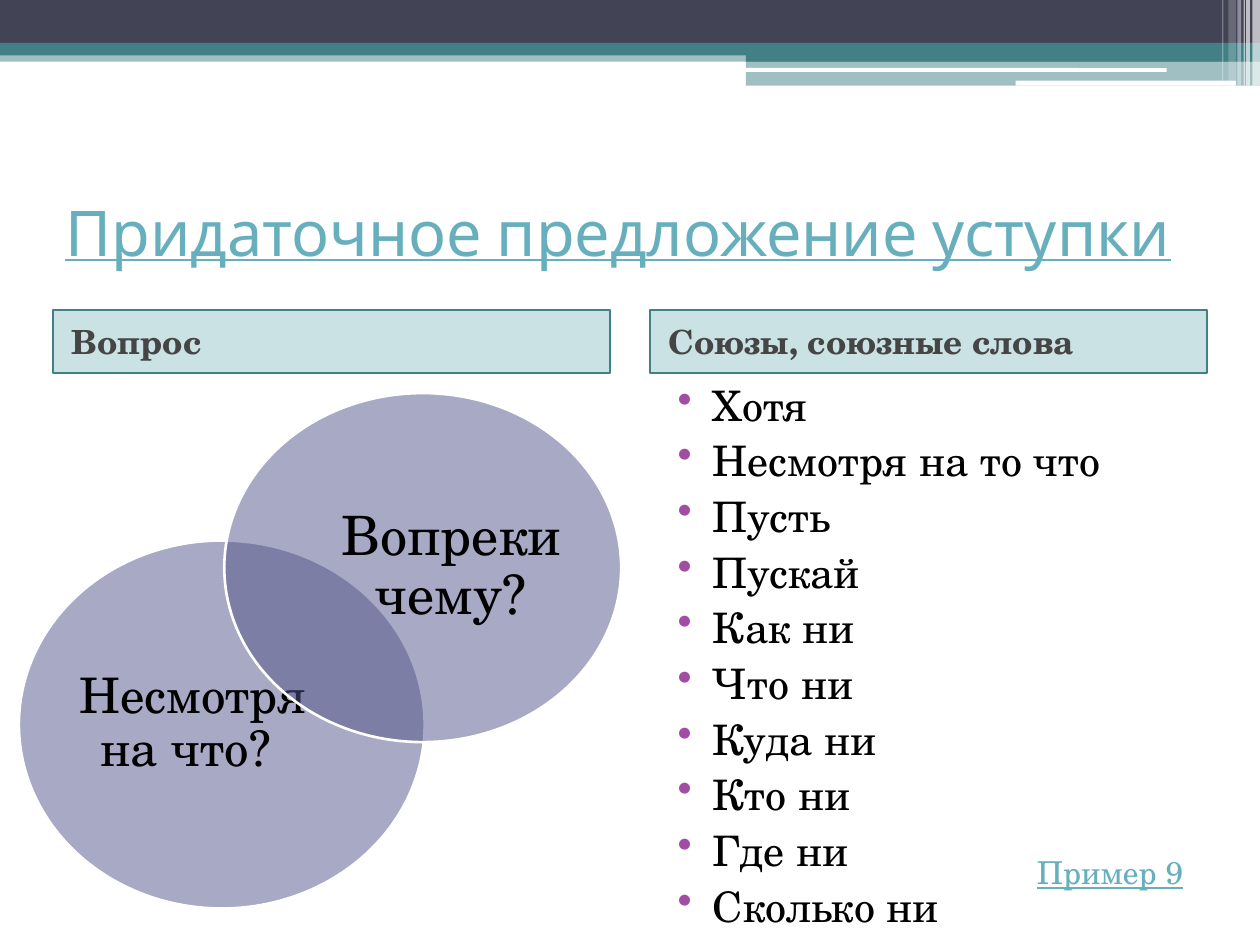
import pptx
import pptx.dml.color
import pptx.enum.shapes
import pptx.enum.text
import pptx.oxml
import pptx.oxml.ns
import pptx.util

Inches = pptx.util.Inches
Pt = pptx.util.Pt
RGBColor = pptx.dml.color.RGBColor
SHAPE = pptx.enum.shapes.MSO_SHAPE
ANCHOR = pptx.enum.text.MSO_ANCHOR
ALIGN = pptx.enum.text.PP_ALIGN

WHITE = RGBColor(0xFF, 0xFF, 0xFF)
BLACK = RGBColor(0, 0, 0)
SLATE = RGBColor(0x42, 0x44, 0x56)
TEAL = RGBColor(0x43, 0x80, 0x86)
HEADING_FILL = RGBColor(0x32, 0x8E, 0x97)
HEADING_TEXT = RGBColor(0x45, 0x45, 0x45)
LINK = RGBColor(0x67, 0xAF, 0xBD)
INDIGO = RGBColor(0x53, 0x54, 0x8A)
BULLET = RGBColor(0xA0, 0x4D, 0xA3)
SERIF = "TeX Gyre Schola"
SANS = "Karla"

CONJUNCTIONS = ["Хотя", "Несмотря на то что", "Пусть", "Пускай", "Как ни",
                "Что ни", "Куда ни", "Кто ни", "Где ни", "Сколько ни"]


def apply(target, formats):
    """Set every attribute named in formats on target."""
    for name, value in formats.items():
        setattr(target, name, value)


def add_xml(parent, tag, **attributes):
    """Append a drawing element with its attributes and return it."""
    element = pptx.oxml.parse_xml(f"<a:{tag} {pptx.oxml.ns.nsdecls('a')}/>")
    for name, value in attributes.items():
        element.set(name, str(value))
    parent.append(element)
    return element


def add_figure(slide, kind, box, color, opacity=100, line=None, line_width=1):
    """Draw a preset shape in box with a fill of the given opacity."""
    figure = slide.shapes.add_shape(kind, *map(Inches, box))
    figure.shadow.inherit = False
    figure.fill.solid()
    figure.fill.fore_color.rgb = color
    if opacity < 100:
        tint = figure.fill._xPr.find(".//" + pptx.oxml.ns.qn("a:srgbClr"))
        add_xml(tint, "alpha", val=opacity * 1000)
    if line is None:
        figure.line.fill.background()
    else:
        figure.line.color.rgb = line
        figure.line.width = Pt(line_width)
    return figure


def write(frame, lines, font, color, frame_format=None, paragraph_format=None):
    """Fill a text frame with one formatted paragraph for each line."""
    apply(frame, {"word_wrap": True, **(frame_format or {})})
    for index, line in enumerate(lines):
        paragraph = frame.paragraphs[0] if index == 0 else frame.add_paragraph()
        apply(paragraph, {"alignment": ALIGN.LEFT, **(paragraph_format or {})})
        run = paragraph.add_run()
        run.text = line
        apply(run.font, {"name": SERIF, **font})
        run.font.color.rgb = color


def add_text(slide, box, lines, font, color, frame_format=None, paragraph_format=None):
    """Add a text box and return its frame."""
    frame = slide.shapes.add_textbox(*map(Inches, box)).text_frame
    write(frame, lines, font, color, frame_format, paragraph_format)
    return frame


def add_banner(slide, left, top, width):
    """Draw the layered bands and the light stripes at the right edge."""
    half = width / 2 + 0.92
    bands = [
        (SHAPE.RECTANGLE, 0, 0.4, width, 0.09, TEAL, 50),
        (SHAPE.RECTANGLE, 0, 0, width, 0.34, SLATE, 100),
        (SHAPE.RECTANGLE, 0, 0.34, width, 0.1, TEAL, 100),
        (SHAPE.RECTANGLE, half, 0.39, width - half, 0.1, TEAL, 100),
        (SHAPE.RECTANGLE, half, 0.48, width - half, 0.2, TEAL, 50),
        (SHAPE.ROUNDED_RECTANGLE, half - 0.01, 0.54, 3.35, 0.03, WHITE, 100),
        (SHAPE.ROUNDED_RECTANGLE, width - 1.94, 0.64, 1.75, 0.04, WHITE, 100),
    ]
    stripes = [(0.06, 0.06, 0.68, 65), (0.11, 0.03, 0.68, 65),
               (0.13, 0.01, 0.68, 60), (0.18, 0.03, 0.68, 40),
               (0.25, 0.06, 0.64, 20), (0.3, 0.01, 0.64, 30)]
    bands += [(SHAPE.RECTANGLE, width - inset, 0, thickness, height, WHITE, opacity)
              for inset, thickness, height, opacity in stripes]
    for kind, x, y, band_width, height, color, opacity in bands:
        add_figure(slide, kind, (left + x, top + y, band_width, height), color, opacity)


def add_title(slide, box):
    """Write the underlined slide title."""
    add_text(slide, box, ["Придаточное предложение уступки"],
             {"name": SANS, "size": Pt(36), "underline": True}, LINK,
             {"vertical_anchor": ANCHOR.MIDDLE})


def add_heading(slide, box, heading):
    """Draw a tinted column heading."""
    plate = add_figure(slide, SHAPE.RECTANGLE, box, HEADING_FILL, 25, TEAL)
    write(plate.text_frame, [heading], {"size": Pt(19), "bold": True}, HEADING_TEXT,
          {"vertical_anchor": ANCHOR.MIDDLE}, {"space_before": Pt(3)})
    properties = plate.text_frame.paragraphs[0]._p.get_or_add_pPr()
    properties.set("marL", str(Inches(0.05)))


def add_questions(slide, left, top):
    """Draw the two overlapping circles with their questions."""
    questions = [
        ("Несмотря на что? ", 28, (0, 1.17, 3.22, 2.92), (0.45, 1.51, 1.86, 2.23)),
        ("Вопреки чему?", 31, (1.63, 0, 3.15, 2.77), (2.52, 0.33, 1.82, 2.11)),
    ]
    margins = dict.fromkeys(
        ["margin_left", "margin_top", "margin_right", "margin_bottom"], 0)
    for question, size, circle, label in questions:
        circle_box, label_box = ((left + x, top + y, width, height)
                                 for x, y, width, height in (circle, label))
        add_figure(slide, SHAPE.OVAL, circle_box, INDIGO, 50, WHITE, 1.5)
        add_text(slide, label_box, [question], {"size": Pt(size)}, BLACK,
                 {"vertical_anchor": ANCHOR.MIDDLE, **margins},
                 {"alignment": ALIGN.CENTER, "line_spacing": 0.9})


def add_conjunctions(slide, box):
    """List the conjunctions with coloured bullets."""
    frame = add_text(slide, box, CONJUNCTIONS, {"size": Pt(24)}, BLACK,
                     paragraph_format={"space_before": Pt(3)})
    for paragraph in frame.paragraphs:
        properties = paragraph._p.get_or_add_pPr()
        properties.set("marL", str(Inches(0.4)))
        properties.set("indent", str(Inches(-0.28)))
        add_xml(add_xml(properties, "buClr"), "srgbClr", val=BULLET)
        add_xml(properties, "buChar", char="•")


def add_example(slide, box):
    """Write the underlined pointer to the example."""
    add_text(slide, box, ["Пример 9"], {"size": Pt(18), "underline": True}, LINK)


def main():
    """Build the slide and save it."""
    presentation = pptx.Presentation()
    apply(presentation, {"slide_width": Inches(10), "slide_height": Inches(7.5)})
    slide = presentation.slides.add_slide(presentation.slide_layouts[6])
    left_column, right_column, column_width = 0.42, 5.16, 4.42
    add_banner(slide, 0, 0, 10)
    add_title(slide, (left_column, 1.25, 9.17, 1.17))
    for column, heading in [(left_column, "Вопрос"),
                            (right_column, "Союзы, союзные слова")]:
        add_heading(slide, (column, 2.46, column_width, 0.5), heading)
    add_questions(slide, 0.15, 3.12)
    add_conjunctions(slide, (right_column, 2.96, column_width, 4.25))
    add_example(slide, (8.13, 6.72, 1.48, 0.4))
    presentation.save("out.pptx")


if __name__ == "__main__":
    main()
